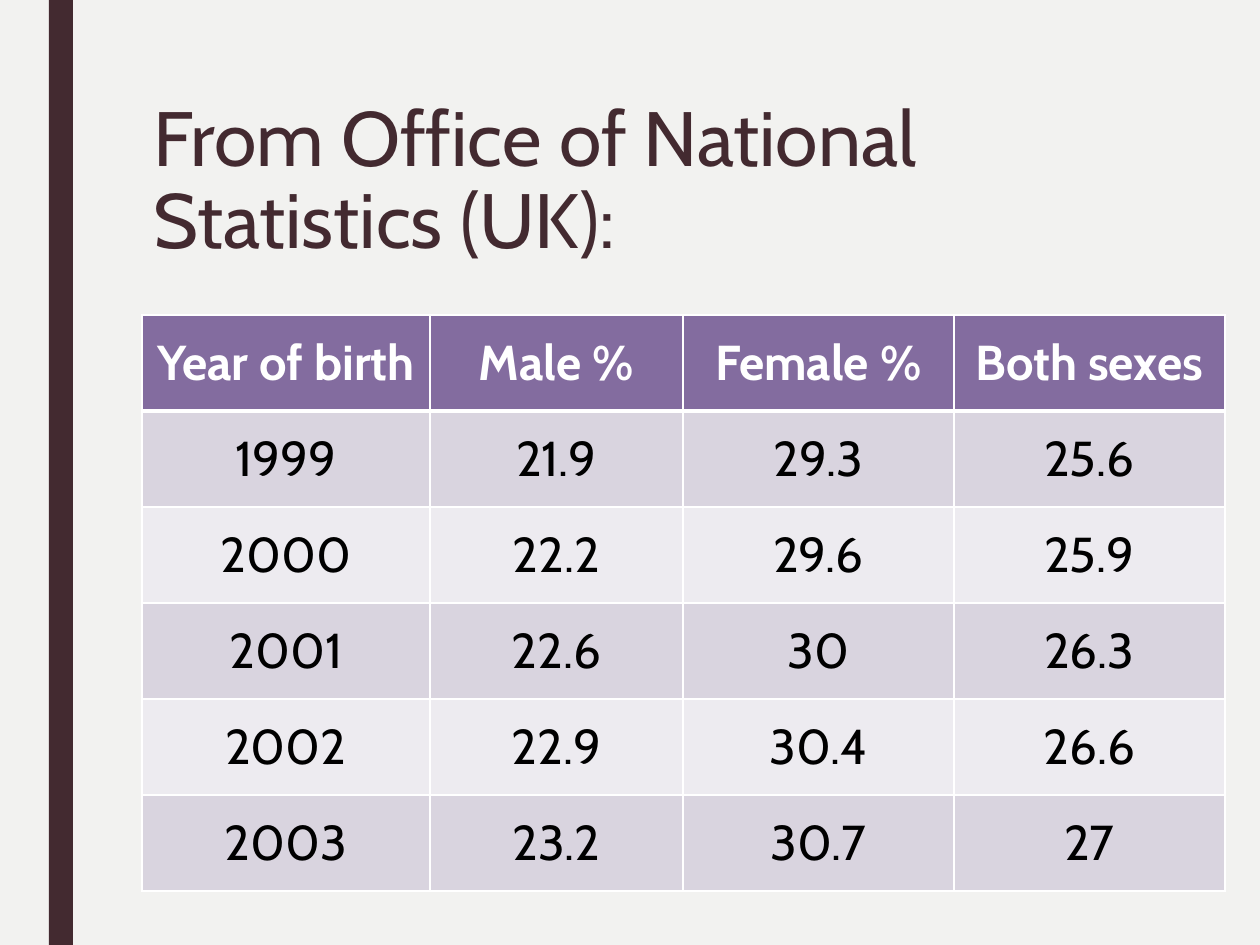
from lxml import etree
from pptx import Presentation
from pptx.dml.color import RGBColor
from pptx.enum.shapes import MSO_SHAPE
from pptx.enum.text import MSO_ANCHOR, PP_ALIGN
from pptx.oxml.ns import qn
from pptx.util import Emu, Pt

RECTANGLE = MSO_SHAPE.RECTANGLE
TOP, MIDDLE = MSO_ANCHOR.TOP, MSO_ANCHOR.MIDDLE
LEFT, CENTER = PP_ALIGN.LEFT, PP_ALIGN.CENTER
EMU_PER_PX = 914400 // 126
TITLE_ONLY = 5

PLUM, PURPLE, WHITE, BLACK = "432A30", "836C9F", "FFFFFF", "000000"
PAPER = "F2F2F0"
BANDS = ("D9D4DF", "EDEBF0")

BIRTH_STATISTICS = [
    ("Year of birth", "Male %", "Female %", "Both sexes"),
    ("1999", "21.9", "29.3", "25.6"),
    ("2000", "22.2", "29.6", "25.9"),
    ("2001", "22.6", "30", "26.3"),
    ("2002", "22.9", "30.4", "26.6"),
    ("2003", "23.2", "30.7", "27"),
]


def px(length):
    return Emu(length * EMU_PER_PX)


def color(hex_value):
    return RGBColor.from_string(hex_value)


class SlideBuilder:
    font_name = "Cabin"
    title_size = 44
    cell_size = 28

    def __init__(self, slide):
        self.slide = slide

    def background(self, fill):
        self.slide.background.fill.solid()
        self.slide.background.fill.fore_color.rgb = color(fill)

    def bar(self, left, top, width, height, fill):
        stripe = self.slide.shapes.add_shape(
            RECTANGLE, px(left), px(top), px(width), px(height))
        stripe.shadow.inherit = False
        stripe.fill.solid()
        stripe.fill.fore_color.rgb = color(fill)
        stripe.line.fill.background()

    def style(self, paragraph, size, ink, bold, align):
        paragraph.alignment = align
        paragraph.font.name = self.font_name
        paragraph.font.size = Pt(size)
        paragraph.font.bold = bold
        paragraph.font.color.rgb = color(ink)

    def title(self, text, left, top, width, height):
        heading = self.slide.shapes.title
        heading.left, heading.top = px(left), px(top)
        heading.width, heading.height = px(width), px(height)
        frame = heading.text_frame
        frame.text = text
        frame.word_wrap = True
        frame.vertical_anchor = TOP
        self.style(frame.paragraphs[0], self.title_size, PLUM, False, LEFT)
        frame.paragraphs[0].line_spacing = 0.89

    def borders(self, cell, widths):
        properties = cell._tc.get_or_add_tcPr()
        for position, (side, points) in enumerate(widths.items()):
            edge = etree.Element(qn(f"a:{side}"), w=str(Pt(points)))
            fill = etree.SubElement(edge, qn("a:solidFill"))
            etree.SubElement(fill, qn("a:srgbClr"), val=WHITE)
            properties.insert(position, edge)

    def table(self, rows, left, top, column_widths, row_height):
        grid = self.slide.shapes.add_table(
            len(rows), len(column_widths), px(left), px(top),
            px(sum(column_widths)), px(row_height * len(rows))).table
        for column, width in zip(grid.columns, column_widths):
            column.width = px(width)
        for row_index, values in enumerate(rows):
            grid.rows[row_index].height = px(row_height)
            header = row_index == 0
            fill = PURPLE if header else BANDS[(row_index - 1) % 2]
            widths = {"lnL": 1, "lnR": 1,
                      "lnT": 3 if row_index == 1 else 1,
                      "lnB": 3 if header else 1}
            for column_index, value in enumerate(values):
                cell = grid.cell(row_index, column_index)
                cell.text = value
                cell.vertical_anchor = MIDDLE
                cell.fill.solid()
                cell.fill.fore_color.rgb = color(fill)
                self.style(cell.text_frame.paragraphs[0], self.cell_size,
                           WHITE if header else BLACK, header, CENTER)
                self.borders(cell, widths)


def main():
    deck = Presentation()
    deck.slide_width, deck.slide_height = px(1260), px(945)
    builder = SlideBuilder(
        deck.slides.add_slide(deck.slide_layouts[TITLE_ONLY]))
    builder.background(PAPER)
    builder.bar(49, 0, 24, 945, PLUM)
    builder.title("From Office of National Statistics (UK):",
                  141, 94, 993, 204)
    builder.table(BIRTH_STATISTICS, 142, 315, (288, 253, 271, 271), 96)
    deck.save("out.pptx")


if __name__ == "__main__":
    main()
